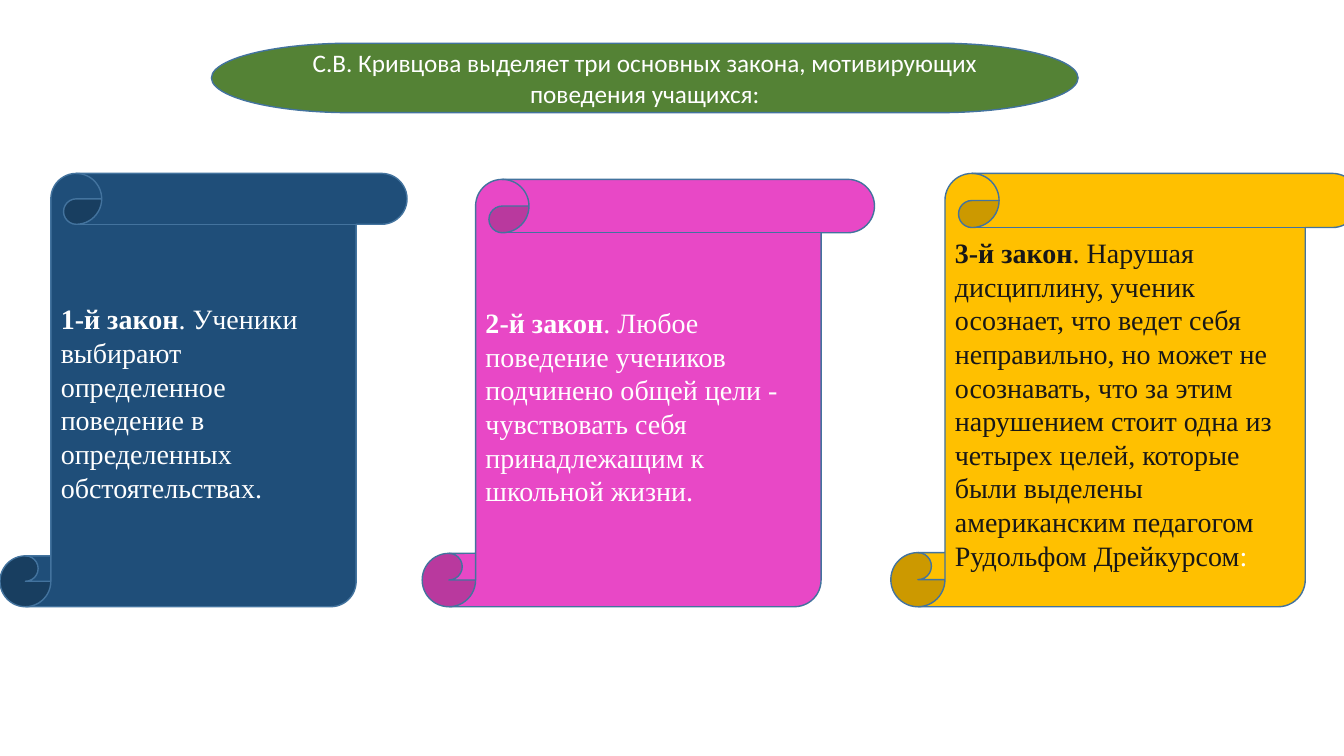
from pptx import Presentation
from pptx.dml.color import RGBColor
from pptx.enum.shapes import MSO_SHAPE as SHAPE
from pptx.enum.text import MSO_ANCHOR as ANCHOR, PP_ALIGN as ALIGN
from pptx.util import Cm, Pt

WHITE = "FFFFFF"
BOTTOM = 15.29


def paint(color_format, color):
    color_format.rgb = RGBColor.from_string(color)


def add_panel(s, kind, box, fill, align, font, size):
    sp = s.shapes.add_shape(kind, *[Cm(v) for v in box])
    sp.shadow.inherit = False
    sp.fill.solid()
    paint(sp.fill.fore_color, fill)
    paint(sp.line.color, "43739E")
    sp.line.width = Pt(1)
    tf = sp.text_frame
    tf.word_wrap = True
    tf.vertical_anchor = ANCHOR.MIDDLE
    p = tf.paragraphs[0]
    p.alignment = align
    p.font.name = font
    p.font.size = Pt(size)
    return p


def add_run(p, text, color, bold=False):
    r = p.add_run()
    r.text = text
    r.font.bold = bold
    paint(r.font.color, color)


def add_title(s, text):
    p = add_panel(s, SHAPE.FLOWCHART_TERMINATOR, (5.33, 1.09, 21.84, 1.75),
                  "548235", ALIGN.CENTER, "Calibri", 18)
    add_run(p, text, WHITE)


def add_law(s, number, left, top, width, fill, color, text):
    p = add_panel(s, SHAPE.VERTICAL_SCROLL, (left, top, width, BOTTOM - top),
                  fill, ALIGN.LEFT, "Times New Roman", 20)
    add_run(p, f"{number}-й закон", color, True)
    add_run(p, f". {text}", color)
    return p


def main():
    prs = Presentation()
    prs.slide_width, prs.slide_height = Cm(33.87), Cm(19.05)
    s = prs.slides.add_slide(prs.slide_layouts[6])
    add_title(s, "С.В. Кривцова выделяет три основных закона, "
                 "мотивирующих поведения учащихся:")
    laws = [
        (0, 4.37, 10.26, "1F4E79", WHITE,
         "Ученики выбирают определенное поведение в определенных "
         "обстоятельствах."),
        (10.64, 4.52, 11.4, "E848C6", WHITE,
         "Любое поведение учеников подчинено общей цели - чувствовать себя "
         "принадлежащим к школьной жизни."),
        (22.45, 4.37, 11.81, "FFC000", "181717",
         "Нарушая дисциплину, ученик осознает, что ведет себя неправильно, "
         "но может не осознавать, что за этим нарушением стоит одна из "
         "четырех целей, которые были выделены американским педагогом "
         "Рудольфом Дрейкурсом"),
    ]
    for number, law in enumerate(laws, 1):
        p = add_law(s, number, *law)
    add_run(p, ":", WHITE)
    prs.save("out.pptx")


if __name__ == "__main__":
    main()
